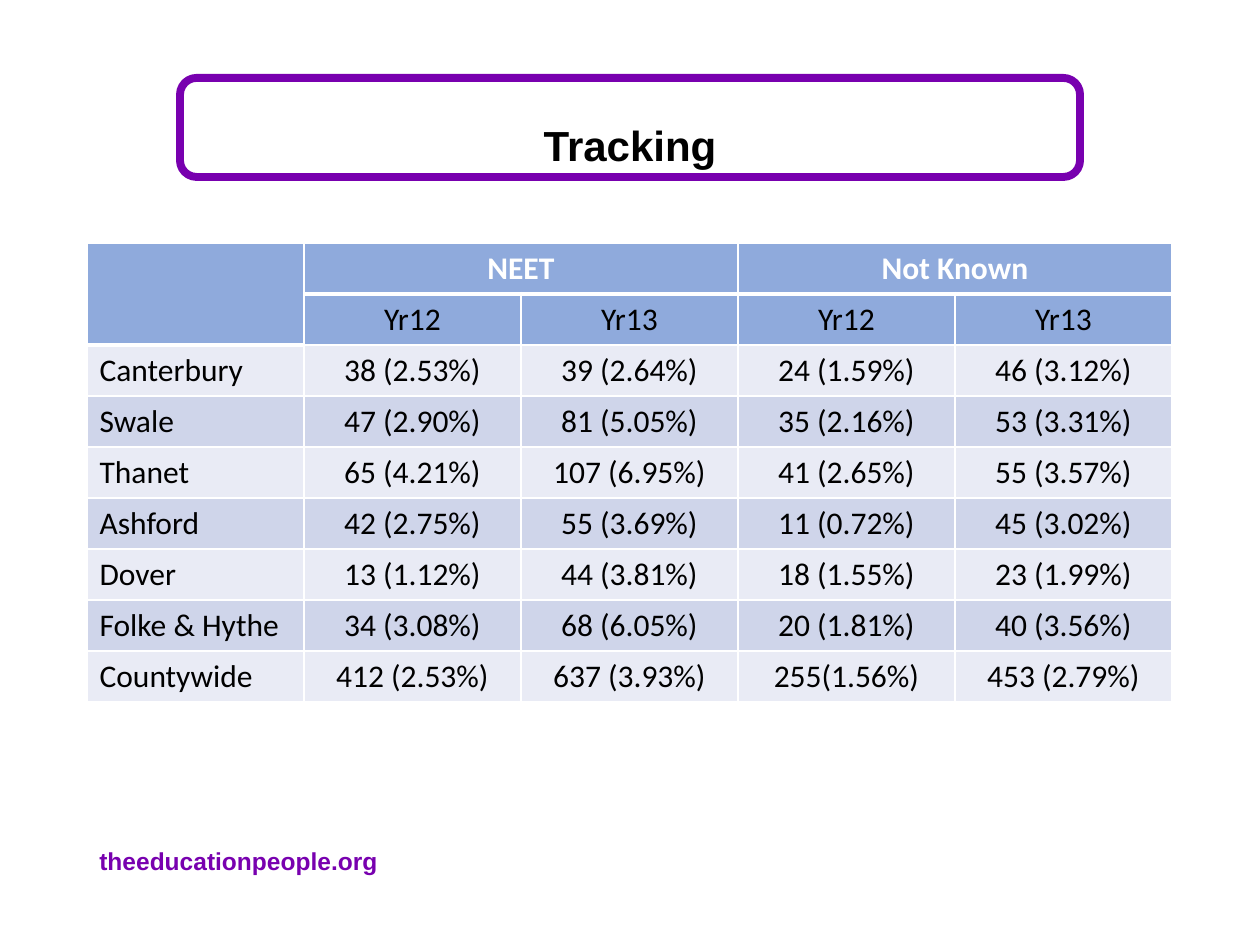
"""Build the Tracking slide with NEET and Not Known figures by district."""
from lxml.etree import SubElement
from pptx import Presentation
from pptx.dml.color import RGBColor
from pptx.enum.shapes import MSO_SHAPE
from pptx.enum.text import MSO_ANCHOR, PP_ALIGN
from pptx.oxml.ns import qn
from pptx.util import Pt

SCALE = 914400 / 126
COLORS = {"purple": "7800AF", "black": "000000", "white": "FFFFFF",
          "header": "8FAADC", "light": "E9EBF5", "dark": "CFD5EA"}
FORMATS = {
    "title": {"name": "Arial", "size": Pt(24), "bold": True, "color": "black"},
    "footer": {"name": "Arial", "size": Pt(14), "bold": True, "color": "purple"},
    "group": {"name": "Calibri", "size": Pt(18), "bold": True, "color": "white"},
    "body": {"name": "Calibri", "size": Pt(18), "bold": False, "color": "black"},
}
TITLE = "Tracking"
FOOTER = "theeducationpeople.org"
TITLE_AREA = (180, 78, 900, 99)
FOOTER_AREA = (87, 840, 312, 43)
TABLE_ORIGIN = (87, 243)
COLUMN_WIDTH, ROW_HEIGHT = 217, 51
HEADER_ROWS = 2
ROWS = [
    ("", "NEET", "", "Not Known", ""),
    ("", "Yr12", "Yr13", "Yr12", "Yr13"),
    ("Canterbury", "38 (2.53%)", "39 (2.64%)", "24 (1.59%)", "46 (3.12%)"),
    ("Swale", "47 (2.90%)", "81 (5.05%)", "35 (2.16%)", "53 (3.31%)"),
    ("Thanet", "65 (4.21%)", "107 (6.95%)", "41 (2.65%)", "55 (3.57%)"),
    ("Ashford", "42 (2.75%)", "55 (3.69%)", "11 (0.72%)", "45 (3.02%)"),
    ("Dover", "13 (1.12%)", "44 (3.81%)", "18 (1.55%)", "23 (1.99%)"),
    ("Folke & Hythe", "34 (3.08%)", "68 (6.05%)", "20 (1.81%)", "40 (3.56%)"),
    ("Countywide", "412 (2.53%)", "637 (3.93%)", "255(1.56%)", "453 (2.79%)"),
]
MERGES = [((0, 0), (1, 0)), ((0, 1), (0, 2)), ((0, 3), (0, 4))]


def px(*lengths):
    return [round(length * SCALE) for length in lengths]


def rgb(name):
    return RGBColor.from_string(COLORS[name])


def write(frame, text, style, align):
    para = frame.paragraphs[0]
    para.alignment = align
    span = para.add_run()
    span.text = text
    for key, value in FORMATS[style].items():
        if key == "color":
            span.font.color.rgb = rgb(value)
        else:
            setattr(span.font, key, value)
    return para


def add_text(slide, area, text, style, align, anchor):
    box = slide.shapes.add_textbox(*px(*area))
    box.text_frame.word_wrap = True
    box.text_frame.vertical_anchor = anchor
    return write(box.text_frame, text, style, align)


def set_borders(cell, widths):
    properties = cell._tc.get_or_add_tcPr()
    for side, width in widths.items():
        line = SubElement(properties, qn(f"a:ln{side}"), w=str(Pt(width)))
        fill = SubElement(line, qn("a:solidFill"))
        SubElement(fill, qn("a:srgbClr"), val=COLORS["white"])


def fill_cell(cell, text, row, column):
    header = row < HEADER_ROWS
    thick_top = row == 1 and column > 0 or row == HEADER_ROWS and column == 0
    thick_bottom = row == 0 or row == 1 and column == 0
    set_borders(cell, {"L": 1, "R": 1, "T": 3 if thick_top else 1,
                       "B": 3 if thick_bottom else 1})
    cell.fill.solid()
    cell.fill.fore_color.rgb = rgb("header" if header else ("light", "dark")[row % 2])
    if text:
        write(cell.text_frame, text, "group" if row == 0 else "body",
              PP_ALIGN.CENTER if column else PP_ALIGN.LEFT)


def add_figures(slide):
    row_count, column_count = len(ROWS), len(ROWS[0])
    size = (COLUMN_WIDTH * column_count, ROW_HEIGHT * row_count)
    table = slide.shapes.add_table(row_count, column_count, *px(*TABLE_ORIGIN, *size)).table
    for column in table.columns:
        column.width = px(COLUMN_WIDTH)[0]
    for row in table.rows:
        row.height = px(ROW_HEIGHT)[0]
    for row, values in enumerate(ROWS):
        for column, text in enumerate(values):
            fill_cell(table.cell(row, column), text, row, column)
    for first, last in MERGES:
        table.cell(*first).merge(table.cell(*last))


def main():
    deck = Presentation()
    deck.slide_width, deck.slide_height = px(1260, 945)
    slide = deck.slides.add_slide(deck.slide_layouts[6])
    add_text(slide, FOOTER_AREA, FOOTER, "footer", PP_ALIGN.LEFT, MSO_ANCHOR.TOP)
    frame = slide.shapes.add_shape(MSO_SHAPE.ROUNDED_RECTANGLE, *px(*TITLE_AREA))
    frame.shadow.inherit = False
    frame.fill.background()
    frame.line.color.rgb = rgb("purple")
    frame.line.width = Pt(4.5)
    title = add_text(slide, TITLE_AREA, TITLE, "title", PP_ALIGN.CENTER, MSO_ANCHOR.BOTTOM)
    title.line_spacing = 0.9
    add_figures(slide)
    deck.save("out.pptx")


if __name__ == "__main__":
    main()
